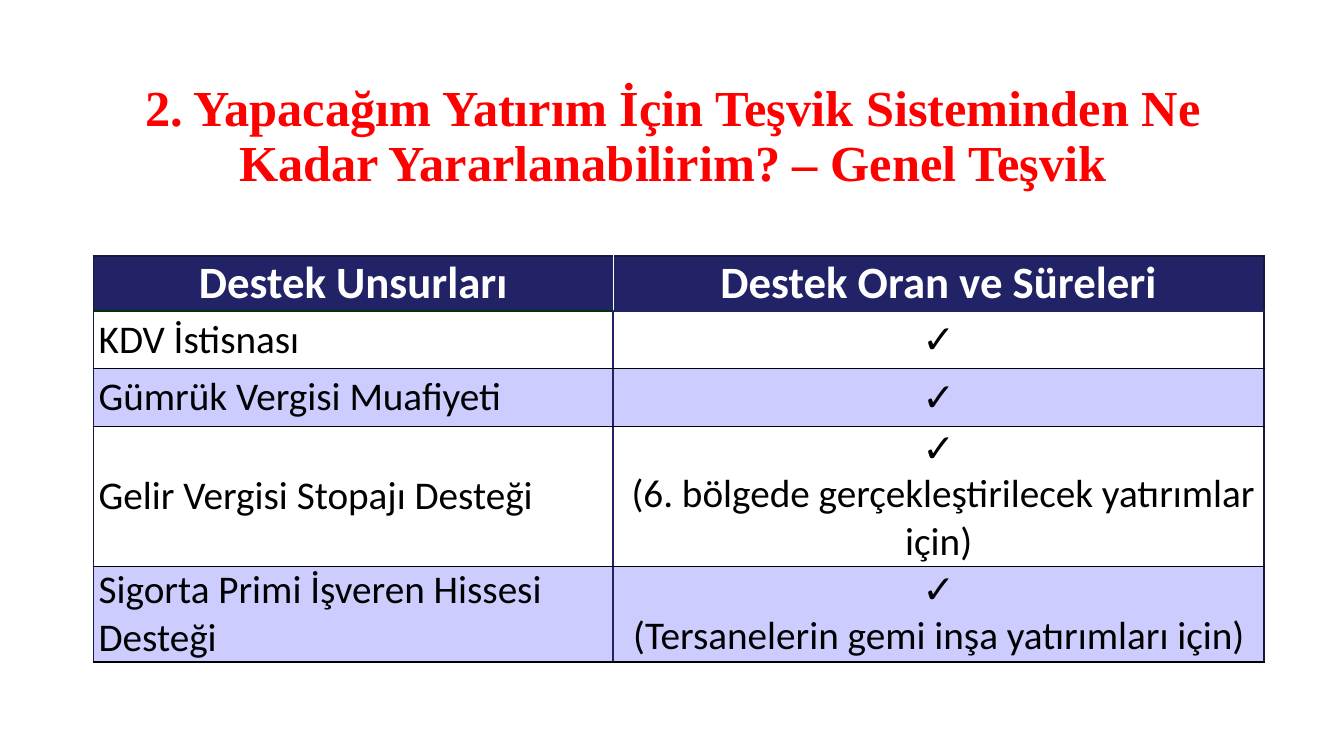
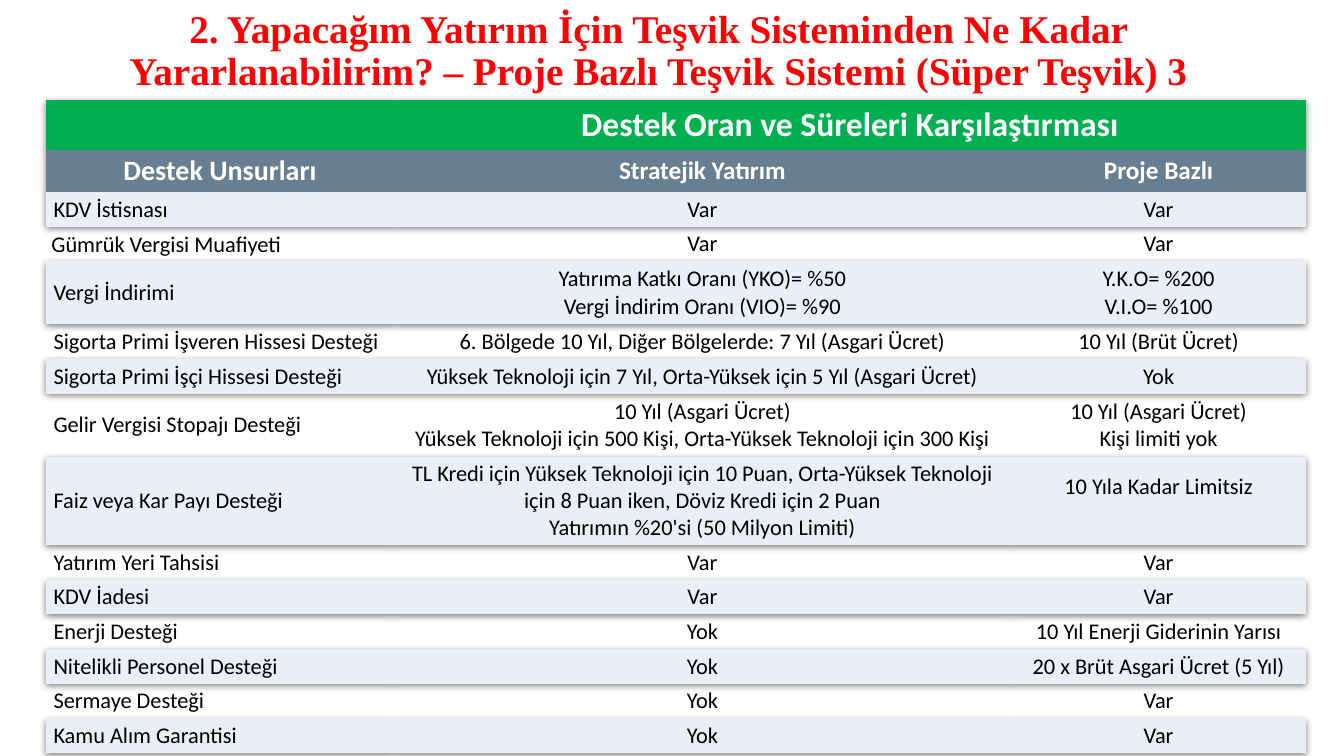
"""Build two slides that set out investment support in tables."""
from dataclasses import dataclass

from lxml.etree import SubElement
from pptx import Presentation
from pptx.dml.color import RGBColor
from pptx.enum.text import MSO_ANCHOR, MSO_AUTO_SIZE, PP_ALIGN
from pptx.oxml import parse_xml
from pptx.oxml.ns import nsdecls, qn
from pptx.util import Emu, Pt


@dataclass(frozen=True)
class Theme:
    """Hold the colours, fonts and type sizes."""
    red: str = "FF0000"
    white: str = "FFFFFF"
    black: str = "000000"
    navy: str = "222267"
    ink: str = "171745"
    pine: str = "003300"
    lilac: str = "CCCCFF"
    green: str = "00B050"
    slate: str = "687F91"
    ice: str = "EAEFF7"
    serif: str = "Times New Roman"
    sans: str = "Calibri"
    mark: str = "Arial"
    title: int = 36
    small: int = 28
    head: int = 32
    body: int = 28
    banner: int = 24
    first: int = 20
    label: int = 18
    note: int = 16


THEME = Theme()
TICK = "✓"
PLAIN = "{2D5ABB26-0587-4C30-8999-92F81FD0307C}"
LEAD = "2. Yapacağım Yatırım İçin Teşvik Sisteminden Ne Kadar Yararlanabilirim? – "

BASIC = (
    ("Destek Unsurları", "Destek Oran ve Süreleri"),
    ("KDV İstisnası", TICK),
    ("Gümrük Vergisi Muafiyeti", TICK),
    ("Gelir Vergisi Stopajı Desteği",
     f"{TICK}\n (6. bölgede gerçekleştirilecek yatırımlar için)"),
    ("Sigorta Primi İşveren Hissesi Desteği",
     f"{TICK}\n(Tersanelerin gemi inşa yatırımları için)"),
)

SUPER = (
    ("", "Destek Oran ve Süreleri Karşılaştırması", ""),
    ("Destek Unsurları", "Stratejik Yatırım", "Proje Bazlı"),
    ("KDV İstisnası", "Var", "Var"),
    ("Gümrük Vergisi Muafiyeti", "Var", "Var"),
    ("Vergi İndirimi",
     "Yatırıma Katkı Oranı (YKO)= %50\nVergi İndirim Oranı (VIO)= %90",
     "Y.K.O= %200\nV.I.O= %100"),
    ("Sigorta Primi İşveren Hissesi Desteği",
     "6. Bölgede 10 Yıl, Diğer Bölgelerde: 7 Yıl (Asgari Ücret)",
     "10 Yıl (Brüt Ücret)"),
    ("Sigorta Primi İşçi Hissesi Desteği",
     "Yüksek Teknoloji için 7 Yıl, Orta-Yüksek için 5 Yıl (Asgari Ücret)",
     "Yok"),
    ("Gelir Vergisi Stopajı Desteği",
     "10 Yıl (Asgari Ücret)\n"
     "Yüksek Teknoloji için 500 Kişi, Orta-Yüksek Teknoloji için 300 Kişi",
     "10 Yıl (Asgari Ücret)\nKişi limiti yok"),
    ("Faiz veya Kar Payı Desteği",
     "TL Kredi için Yüksek Teknoloji için 10 Puan, Orta-Yüksek Teknoloji "
     "için 8 Puan iken, Döviz Kredi için 2 Puan\n"
     "Yatırımın %20'si (50 Milyon Limiti)",
     "10 Yıla Kadar Limitsiz"),
    ("Yatırım Yeri Tahsisi", "Var", "Var"),
    ("KDV İadesi", "Var", "Var"),
    ("Enerji Desteği", "Yok", "10 Yıl Enerji Giderinin Yarısı"),
    ("Nitelikli Personel Desteği", "Yok", "20 x Brüt Asgari Ücret (5 Yıl)"),
    ("Sermaye Desteği", "Yok", "Var"),
    ("Kamu Alım Garantisi", "Yok", "Var"),
)


def px(count):
    """Turn pixels into EMU."""
    return Emu(count * 9525)


def put(item, form):
    """Set each value of a format on an item."""
    for name, value in form.items():
        setattr(item, name, value)


def style(frame, size, tint, bold, align, face=THEME.sans, space=None):
    """Format all the text in a frame."""
    for para in frame.paragraphs:
        put(para, {"alignment": align, "line_spacing": space})
        for run in para.runs:
            name = THEME.mark if run.text == TICK else face
            put(run.font, {"size": Pt(size), "bold": bold, "name": name})
            run.font.color.rgb = RGBColor.from_string(tint)


def place(item, box):
    """Move and size an item by its pixel box."""
    put(item, dict(zip(("left", "top", "width", "height"), map(px, box))))


def start(deck, text, size, box):
    """Add a slide and set its title."""
    slide = deck.slides.add_slide(deck.slide_layouts[5])
    title = slide.shapes.title
    place(title, box)
    frame = title.text_frame
    put(frame, {"text": LEAD + text, "word_wrap": True,
                "auto_size": MSO_AUTO_SIZE.NONE,
                "vertical_anchor": MSO_ANCHOR.MIDDLE})
    style(frame, size, THEME.red, True, PP_ALIGN.CENTER, THEME.serif, 0.9)
    return slide


def inset(cell, *sides):
    """Set left, top, right and bottom cell margins."""
    names = ("margin_left", "margin_top", "margin_right", "margin_bottom")
    put(cell, dict(zip(names, map(px, sides))))


def paint(cell, tint):
    """Fill a cell, or leave it clear."""
    if tint:
        cell.fill.solid()
        cell.fill.fore_color.rgb = RGBColor.from_string(tint)
    else:
        cell.fill.background()


def edge(cell, lines):
    """Draw cell borders, given in left, right, top, bottom order."""
    props = cell._tc.get_or_add_tcPr()
    for spot, (side, (tint, width)) in enumerate(zip("LRTB", lines)):
        line = parse_xml(
            f'<a:ln{side} {nsdecls("a")} w="{Pt(width)}"><a:solidFill>'
            f'<a:srgbClr val="{tint}"/></a:solidFill></a:ln{side}>')
        props.insert(spot, line)


def shade(table):
    """Cast a soft shadow below a table."""
    props = table._tbl.tblPr
    cast = parse_xml(
        f'<a:effectLst {nsdecls("a")}><a:outerShdw blurRad="63500" '
        'dist="25400" dir="5400000" algn="ctr" rotWithShape="0">'
        '<a:srgbClr val="000000"><a:alpha val="50000"/></a:srgbClr>'
        '</a:outerShdw></a:effectLst>')
    props.insert(0, cast)


def grid(slide, data, spot, cols, rows, look):
    """Add a table whose cells take size, ink, fill and margins from look."""
    box = (*spot, sum(cols), sum(rows))
    table = slide.shapes.add_table(len(rows), len(cols), *map(px, box)).table
    put(table, {"first_row": False, "horz_banding": False})
    props = table._tbl.tblPr
    for old in props.findall(qn("a:tableStyleId")):
        props.remove(old)
    SubElement(props, qn("a:tableStyleId")).text = PLAIN
    for col, width in zip(table.columns, cols):
        col.width = px(width)
    for row, height in zip(table.rows, rows):
        row.height = px(height)
    for r, line in enumerate(data):
        for c, text in enumerate(line):
            cell = table.cell(r, c)
            size, tint, fill, sides, head = look(r, c)
            put(cell, {"text": text, "vertical_anchor": MSO_ANCHOR.MIDDLE})
            inset(cell, *sides)
            align = PP_ALIGN.CENTER if head or c else PP_ALIGN.LEFT
            style(cell.text_frame, size, tint, head, align)
            paint(cell, fill)
    return table


def simple(row, col):
    """Give the look of a cell in the basic table."""
    sides = (5, 0, 5, 0)
    if row == 0:
        return THEME.head, THEME.white, THEME.navy, sides, True
    fill = None if row % 2 else THEME.lilac
    return THEME.body, THEME.black, fill, sides, False


def rich(row, col):
    """Give the look of a cell in the wide table."""
    sides = (7, 3, 7, 3)
    if row == 0:
        return THEME.banner, THEME.white, THEME.green, (9, 4, 9, 4), True
    if row == 1:
        size = THEME.label if col else THEME.first
        return size, THEME.white, THEME.slate, sides, True
    fill = None if row % 2 else THEME.ice
    return THEME.note, THEME.black, fill, sides, False


def frame_all(table):
    """Rule the borders of the basic table."""
    side, thin = (THEME.ink, 1.5), (THEME.black, 1)
    under = ((THEME.pine, 1.5), (THEME.navy, 2.25))
    for r in range(len(table.rows)):
        mid = (THEME.navy, 1.5) if r else (THEME.white, 1)
        for c in range(2):
            top = side if r == 0 else under[c] if r == 1 else thin
            base = thin if r else under[c]
            ends = (mid, side) if c else (side, mid)
            edge(table.cell(r, c), (*ends, top, base))


def main():
    """Build and save the deck."""
    deck = Presentation()
    put(deck, {"slide_width": px(1280), "slide_height": px(720)})

    slide = start(deck, "Genel Teşvik", THEME.title, (89, 81, 1104, 100))
    table = grid(slide, BASIC, (89, 244), (495, 620),
                 (52, 55, 55, 133, 90), simple)
    frame_all(table)

    slide = start(deck, "Proje Bazlı Teşvik Sistemi (Süper Teşvik) 3",
                  THEME.small, (91, 13, 1072, 73))
    rows = (48, 40, 33, 33, 60, 33, 33, 60, 84, *[33] * 6)
    table = grid(slide, SUPER, (44, 95), (331, 588, 281), rows, rich)
    table.cell(0, 1).merge(table.cell(0, 2))
    duty = table.cell(3, 0)
    inset(duty, 5, 0, 5, 0)
    put(duty.text_frame.paragraphs[0],
        {"alignment": PP_ALIGN.JUSTIFY, "line_spacing": 1.07})
    inset(table.cell(8, 2), 7, 3, 7, 30)
    shade(table)

    deck.save("out.pptx")


if __name__ == "__main__":
    main()
